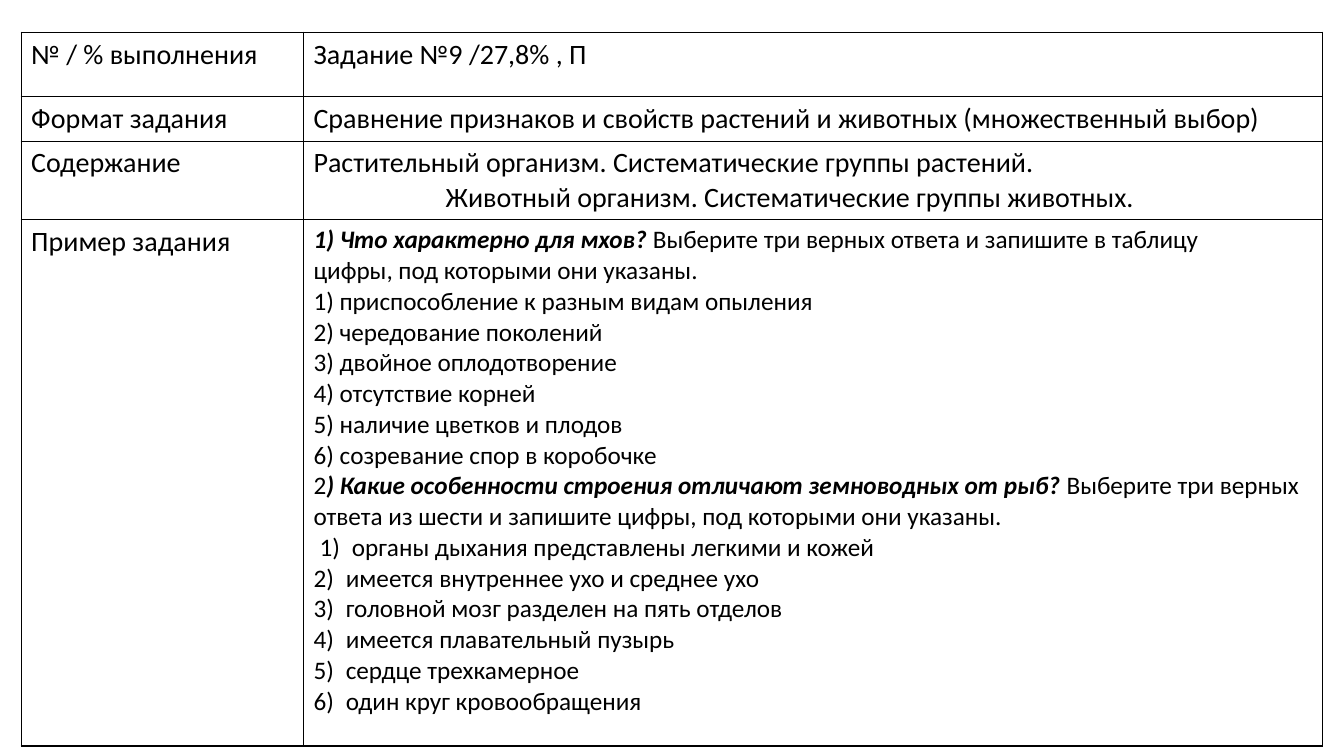
from dataclasses import dataclass

from lxml.etree import SubElement
from pptx import Presentation
from pptx.dml.color import RGBColor
from pptx.oxml.ns import qn
from pptx.table import _Cell
from pptx.util import Inches, Pt

COLOURS = {"ink": "000000", "paper": "FFFFFF"}
COLUMN_WIDTHS = (2.8, 10.11)
ANSWER_TAB = 0.32


@dataclass(frozen=True)
class Piece:
    """A stretch of text, plain or emphasised."""
    text: str
    strong: bool = False


@dataclass(frozen=True)
class Line:
    """A paragraph with its left indent and optional tab stop in inches."""
    pieces: tuple[Piece, ...]
    indent: float = 0
    tab: float = 0


@dataclass(frozen=True)
class Row:
    """A labelled table row."""
    label: str
    lines: list[Line]
    height: float
    size: int = 20


def plain(text: str, indent: float = 0) -> Line:
    """Make a line of plain text."""
    return Line((Piece(text),), indent)


MOSS_ANSWERS = (
    "приспособление к разным видам опыления",
    "чередование поколений",
    "двойное оплодотворение",
    "отсутствие корней",
    "наличие цветков и плодов",
    "созревание спор в коробочке",
)
AMPHIBIAN_ANSWERS = (
    "органы дыхания представлены легкими и кожей",
    "имеется внутреннее ухо и среднее ухо",
    "головной мозг разделен на пять отделов",
    "имеется плавательный пузырь",
    "сердце трехкамерное",
    "один круг кровообращения",
)
EXAMPLE = [
    Line((Piece("1) Что характерно для мхов? ", True),
          Piece("Выберите три верных ответа и запишите в таблицу"))),
    plain("цифры, под которыми они указаны."),
    *(plain(f"{number}) {answer}") for number, answer in enumerate(MOSS_ANSWERS, 1)),
    Line((Piece("2"),
          Piece(") Какие особенности строения отличают земноводных от рыб? ", True),
          Piece("Выберите три верных ответа из шести и запишите цифры, "
                "под которыми они указаны."))),
    *(Line((Piece(f"{number})\t{answer}"),), 0.06 if number == 1 else 0, ANSWER_TAB)
      for number, answer in enumerate(AMPHIBIAN_ANSWERS, 1)),
]
ROWS = [
    Row("№ / % выполнения", [plain("Задание №9 /27,8% , П")], 0.64),
    Row("Формат задания",
        [plain("Сравнение признаков и свойств растений и животных (множественный выбор)")],
        0.44),
    Row("Содержание",
        [plain("Растительный организм. Систематические группы растений."),
         plain("Животный организм. Систематические группы животных.", 1.31)], 0.76),
    Row("Пример задания", EXAMPLE, 5.22, 18),
]


def write_lines(cell: _Cell, lines: list[Line], size: int) -> None:
    """Write formatted paragraphs into a cell."""
    frame = cell.text_frame
    for index, line in enumerate(lines):
        paragraph = frame.add_paragraph() if index else frame.paragraphs[0]
        properties = paragraph._p.get_or_add_pPr()
        if line.indent:
            properties.set("marL", str(Inches(line.indent)))
        if line.tab:
            stops = SubElement(properties, qn("a:tabLst"))
            SubElement(stops, qn("a:tab"), pos=str(Inches(line.tab)), algn="l")
        paragraph.font.name = "Calibri"
        paragraph.font.size = Pt(size)
        paragraph.font.color.rgb = RGBColor.from_string(COLOURS["ink"])
        for piece in line.pieces:
            run = paragraph.add_run()
            run.text = piece.text
            if piece.strong:
                run.font.bold = run.font.italic = True


def style_cell(cell: _Cell) -> None:
    """Give a cell thin borders and a plain background."""
    properties = cell._tc.get_or_add_tcPr()
    for side in ("lnL", "lnR", "lnT", "lnB"):
        border = SubElement(properties, qn(f"a:{side}"), w=str(Pt(1)))
        fill = SubElement(border, qn("a:solidFill"))
        SubElement(fill, qn("a:srgbClr"), val=COLOURS["ink"])
    cell.fill.solid()
    cell.fill.fore_color.rgb = RGBColor.from_string(COLOURS["paper"])


def main() -> None:
    """Build the slide with the task table."""
    presentation = Presentation()
    presentation.slide_width = Inches(13.33)
    presentation.slide_height = Inches(7.5)
    slide = presentation.slides.add_slide(presentation.slide_layouts[6])
    tasks = slide.shapes.add_table(
        len(ROWS), len(COLUMN_WIDTHS), Inches(0.21), Inches(0.32),
        Inches(sum(COLUMN_WIDTHS)), Inches(sum(row.height for row in ROWS))).table
    tasks.first_row = tasks.horz_banding = False
    for column, width in zip(tasks.columns, COLUMN_WIDTHS):
        column.width = Inches(width)
    for index, row in enumerate(ROWS):
        tasks.rows[index].height = Inches(row.height)
        write_lines(tasks.cell(index, 0), [plain(row.label)], 20)
        write_lines(tasks.cell(index, 1), row.lines, row.size)
    for cell in tasks.iter_cells():
        style_cell(cell)
    presentation.save("out.pptx")


if __name__ == "__main__":
    main()
